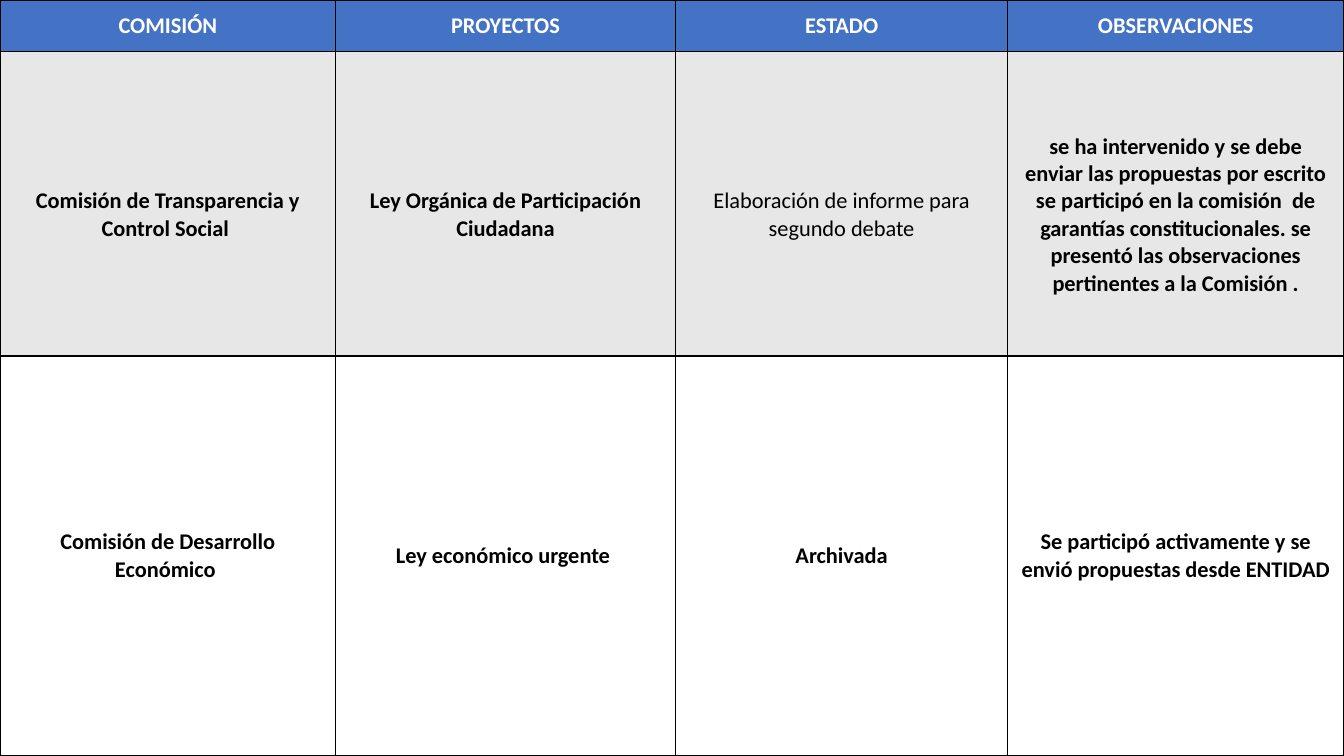
from dataclasses import dataclass

from lxml import etree
from pptx import Presentation
from pptx.dml.color import RGBColor
from pptx.enum.text import MSO_ANCHOR, PP_ALIGN
from pptx.oxml.ns import qn
from pptx.util import Cm, Pt

MIDDLE = MSO_ANCHOR.MIDDLE
CENTER = PP_ALIGN.CENTER


@dataclass(frozen=True)
class Theme:
    font: str = "Calibri"
    size: int = 16
    border_width: int = 1
    border: str = "000000"
    text: str = "000000"
    header_text: str = "FFFFFF"
    header_fill: str = "4472C4"
    band_fill: str = "E7E7E7"
    plain_fill: str = "FFFFFF"


@dataclass(frozen=True)
class Row:
    height: float
    fill: str
    color: str
    texts: tuple
    regular: tuple = ()


THEME = Theme()
COLUMNS = (8.46, 8.56, 8.38, 8.46)

HEADER = Row(1.3, THEME.header_fill, THEME.header_text,
             ("COMISIÓN", "PROYECTOS", "ESTADO", "OBSERVACIONES"))
TRANSPARENCY = Row(8.23, THEME.band_fill, THEME.text, (
    "Comisión de Transparencia y Control Social ",
    "Ley Orgánica de Participación Ciudadana",
    "Elaboración de informe para segundo debate",
    "se ha intervenido y se debe enviar las propuestas por escrito\n"
    "se participó en la comisión  de garantías constitucionales. "
    "se presentó las observaciones pertinentes a la Comisión .",
), regular=(2,))
ECONOMY = Row(10.08, THEME.plain_fill, THEME.text, (
    "Comisión de Desarrollo Económico ",
    "Ley económico urgente ",
    "Archivada",
    "Se participó activamente y se envió propuestas desde ENTIDAD",
))


def add_borders(cell):
    tc_pr = cell._tc.get_or_add_tcPr()
    for side in ("lnL", "lnR", "lnT", "lnB"):
        line = etree.SubElement(tc_pr, qn(f"a:{side}"), w=str(Pt(THEME.border_width)))
        fill = etree.SubElement(line, qn("a:solidFill"))
        etree.SubElement(fill, qn("a:srgbClr"), val=THEME.border)


def fill_cell(cell, text, row, bold):
    add_borders(cell)
    cell.fill.solid()
    cell.fill.fore_color.rgb = RGBColor.from_string(row.fill)
    cell.vertical_anchor = MIDDLE
    cell.text = text
    for p in cell.text_frame.paragraphs:
        p.alignment = CENTER
        p.font.name = THEME.font
        p.font.size = Pt(THEME.size)
        p.font.bold = bold
        p.font.color.rgb = RGBColor.from_string(row.color)


def add_commission_table(slide, left, top, columns, rows):
    width, height = sum(columns), sum(row.height for row in rows)
    table = slide.shapes.add_table(len(rows), len(columns), Cm(left), Cm(top),
                                   Cm(width), Cm(height)).table
    table.first_row = rows[0] is HEADER
    table.horz_banding = False
    for column, column_width in zip(table.columns, columns):
        column.width = Cm(column_width)
    for r, row in enumerate(rows):
        table.rows[r].height = Cm(row.height)
        for c, text in enumerate(row.texts):
            fill_cell(table.cell(r, c), text, row, c not in row.regular)


def main():
    prs = Presentation()
    prs.slide_width, prs.slide_height = Cm(33.87), Cm(19.05)
    slide = prs.slides.add_slide(prs.slide_layouts[6])
    add_commission_table(slide, 0, 0, COLUMNS, (HEADER, TRANSPARENCY))
    add_commission_table(slide, 0, 19.05 - ECONOMY.height, COLUMNS, (ECONOMY,))
    prs.save("out.pptx")


if __name__ == "__main__":
    main()
